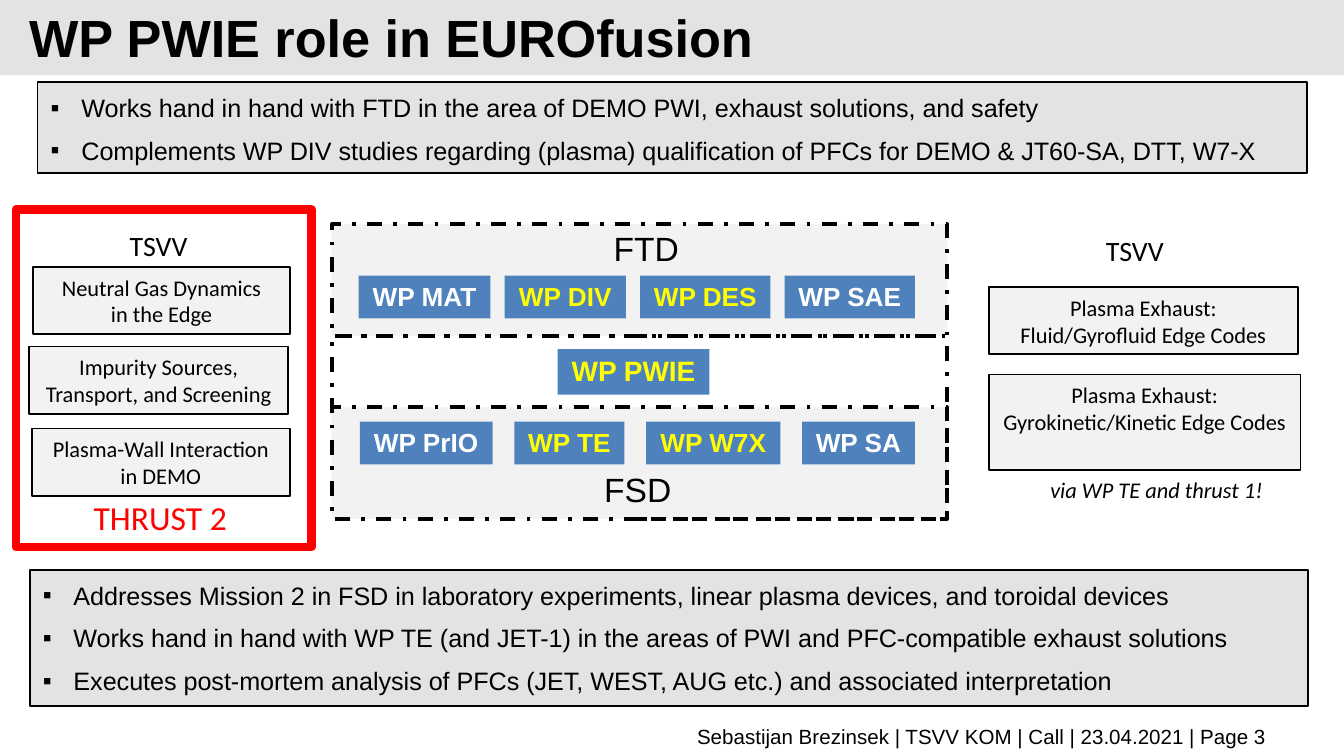
from lxml import etree
from pptx import Presentation
from pptx.dml.color import RGBColor
from pptx.enum.dml import MSO_LINE
from pptx.enum.shapes import MSO_SHAPE
from pptx.enum.text import MSO_ANCHOR, PP_ALIGN
from pptx.oxml.ns import qn
from pptx.util import Cm, Pt

RECTANGLE = MSO_SHAPE.RECTANGLE
DASH_DOT = MSO_LINE.DASH_DOT
TOP, MIDDLE = MSO_ANCHOR.TOP, MSO_ANCHOR.MIDDLE
LEFT, CENTER, RIGHT = PP_ALIGN.LEFT, PP_ALIGN.CENTER, PP_ALIGN.RIGHT

BLACK, WHITE, RED, YELLOW = "000000", "FFFFFF", "FF0000", "FFFF00"
GREY, PALE, BLUE = "E3E3E3", "F2F2F2", "4F81BD"

TITLE = {"name": "Arial", "size": Pt(28), "bold": True}
BULLET = {"name": "Arial", "size": Pt(13.5)}
FOOTER = {"name": "Arial", "size": Pt(11)}
TAG = {"name": "Arial", "size": Pt(14), "bold": True}
MAIN_TAG = {**TAG, "size": Pt(15)}
DEPARTMENT = {"name": "Arial", "size": Pt(18)}
HEADING = {"name": "Calibri", "size": Pt(15)}
TASK = {"name": "Calibri", "size": Pt(12)}
REMARK = {**TASK, "italic": True}
THRUST = {"name": "Calibri", "size": Pt(18)}

SINGLE = {"line_spacing": 0.95}
CENTERED = {"alignment": CENTER}
TAG_PARA = {**SINGLE, **CENTERED}
BULLET_PARA = {"alignment": LEFT, "line_spacing": 1.13, "space_after": Pt(4.5)}


def color(code):
    return RGBColor.from_string(code)


def inside(box, left, top, width, height):
    """Turn a place relative to a box into a place on the page."""
    return box[0] + left, box[1] + top, width, height


def set_format(target, values):
    for name, value in values.items():
        setattr(target, name, value)


def write(shape, lines, font, para_format, ink=BLACK, wrap=True, anchor=TOP):
    frame = shape.text_frame
    frame.word_wrap = wrap
    frame.vertical_anchor = anchor
    for index, line in enumerate(lines):
        para = frame.paragraphs[0] if index == 0 else frame.add_paragraph()
        set_format(para, para_format)
        span = para.add_run()
        span.text = line
        set_format(span.font, font)
        span.font.color.rgb = color(ink)


def add_rectangle(page, box, fill=None, line=None, weight=1, dash=None):
    shape = page.shapes.add_shape(RECTANGLE, *map(Cm, box))
    shape.shadow.inherit = False
    if fill:
        shape.fill.solid()
        shape.fill.fore_color.rgb = color(fill)
    else:
        shape.fill.background()
    if line:
        shape.line.color.rgb = color(line)
        shape.line.width = Pt(weight)
        shape.line.dash_style = dash
    else:
        shape.line.fill.background()
    return shape


def add_label(page, box, text, font, para_format, **options):
    label = page.shapes.add_textbox(*map(Cm, box))
    write(label, [text], font, para_format, **options)


def add_tag(page, box, text, ink, font=TAG):
    tag = add_rectangle(page, box, BLUE)
    write(tag, [text], font, TAG_PARA, ink, wrap=False)


def add_task(page, box, lines, wrap=False):
    task = add_rectangle(page, box, PALE, BLACK)
    write(task, lines, TASK, CENTERED, wrap=wrap)


def add_header(page, box, text):
    add_rectangle(page, box, GREY)
    add_label(page, inside(box, 0.3, 0.23, 21.92, 0.97), text, TITLE,
              {"line_spacing": Pt(32)}, anchor=MIDDLE)


def add_bullets(page, box, lines):
    panel = add_rectangle(page, box, GREY, BLACK)
    write(panel, lines, BULLET, BULLET_PARA)
    for para in panel.text_frame.paragraphs:
        props = para._p.get_or_add_pPr()
        props.set("marL", str(Cm(0.58)))
        props.set("indent", str(-Cm(0.58)))
        etree.SubElement(props, qn("a:buFont")).set("typeface", "Arial")
        etree.SubElement(props, qn("a:buChar")).set("char", "▪")


def add_tag_row(page, box, gap, tags):
    """Lay tags side by side with one gap, starting at the box's left."""
    left = 0
    for text, width, ink in tags:
        add_tag(page, inside(box, left, 0, width, box[3]), text, ink)
        left += width + gap


def add_departments(page, box):
    width, height = box[2:]
    band = 2.11
    frame = {"line": BLACK, "weight": 2, "dash": DASH_DOT}
    for top in (height - band, 0):
        add_rectangle(page, inside(box, 0, top, width, band), PALE, **frame)
    add_rectangle(page, inside(box, 0, band, width, height - band), **frame)

    add_label(page, inside(box, 5.08, 0, 1.75, 0.99), "FTD", DEPARTMENT, SINGLE, wrap=False)
    add_tag_row(page, inside(box, 0.51, 0.97, 10.6, 0.81), 0.27, [
        ("WP MAT", 2.49, WHITE), ("WP DIV", 2.29, YELLOW),
        ("WP DES", 2.46, YELLOW), ("WP SAE", 2.46, WHITE)])
    add_tag(page, inside(box, 4.27, 2.36, 2.87, 0.86), "WP PWIE", YELLOW, MAIN_TAG)
    add_tag_row(page, inside(box, 0.53, 3.73, 10.6, 0.81), 0.41, [
        ("WP PrIO", 2.51, WHITE), ("WP TE", 2.08, YELLOW),
        ("WP W7X", 2.54, YELLOW), ("WP SA", 2.13, WHITE)])
    add_label(page, inside(box, 4.9, 4.55, 1.8, 0.99), "FSD", DEPARTMENT, SINGLE, wrap=False)


def add_thrust(page, box):
    add_rectangle(page, box, line=RED, weight=4.5)
    add_label(page, inside(box, 1.9, 0.28, 1.63, 0.86), "TSVV", HEADING, SINGLE, wrap=False)
    tasks = [
        (0.33, 1.09, 4.85, ["Neutral Gas Dynamics", "in the Edge"]),
        (0.25, 2.59, 4.9, ["Impurity Sources,", "Transport, and Screening"]),
        (0.3, 4.14, 4.88, ["Plasma-Wall Interaction", "in DEMO"]),
    ]
    for left, top, width, lines in tasks:
        add_task(page, inside(box, left, top, width, 1.27), lines)
    add_label(page, inside(box, 1.22, 5.31, 3.05, 1.02), "THRUST 2", THRUST, {},
              ink=RED, wrap=False)


def add_exhaust(page, box):
    add_label(page, inside(box, 1.96, 0, 1.63, 0.86), "TSVV", HEADING, SINGLE, wrap=False)
    add_task(page, inside(box, 0, 1.09, 5.84, 1.27),
             ["Plasma Exhaust:", "Fluid/Gyrofluid Edge Codes"], wrap=True)
    add_task(page, inside(box, 0, 2.74, 5.89, 1.8),
             ["Plasma Exhaust:", "Gyrokinetic/Kinetic Edge Codes"], wrap=True)
    add_label(page, inside(box, 0.91, 4.57, 4.67, 0.74), "via WP TE and thrust 1!",
              REMARK, SINGLE, wrap=False)


def main():
    deck = Presentation()
    deck.slide_width, deck.slide_height = Cm(25.4), Cm(14.29)
    page = deck.slides.add_slide(deck.slide_layouts[6])

    add_header(page, (0, 0, 25.4, 1.42), "WP PWIE role in EUROfusion")
    add_bullets(page, (0.71, 1.55, 24, 1.73), [
        "Works hand in hand with FTD in the area of DEMO PWI, exhaust solutions, and safety",
        "Complements WP DIV studies regarding (plasma) qualification of PFCs for DEMO & JT60-SA, DTT, W7-X",
    ])
    add_thrust(page, (0.3, 3.96, 5.59, 6.38))
    add_departments(page, (6.27, 4.24, 11.63, 5.57))
    add_exhaust(page, (18.69, 4.34, 5.89, 5.31))
    add_bullets(page, (0.56, 10.77, 24.16, 2.57), [
        "Addresses Mission 2 in FSD in laboratory experiments, linear plasma devices, and toroidal devices",
        "Works hand in hand with WP TE (and JET-1) in the areas of PWI and PFC-compatible exhaust solutions",
        "Executes post-mortem analysis of PFCs (JET, WEST, AUG etc.) and associated interpretation",
    ])
    add_label(page, (1.3, 13.64, 22.89, 0.56),
              "Sebastijan Brezinsek | TSVV KOM | Call | 23.04.2021 | Page 3",
              FOOTER, {"alignment": RIGHT}, anchor=MIDDLE)
    deck.save("out.pptx")


if __name__ == "__main__":
    main()
